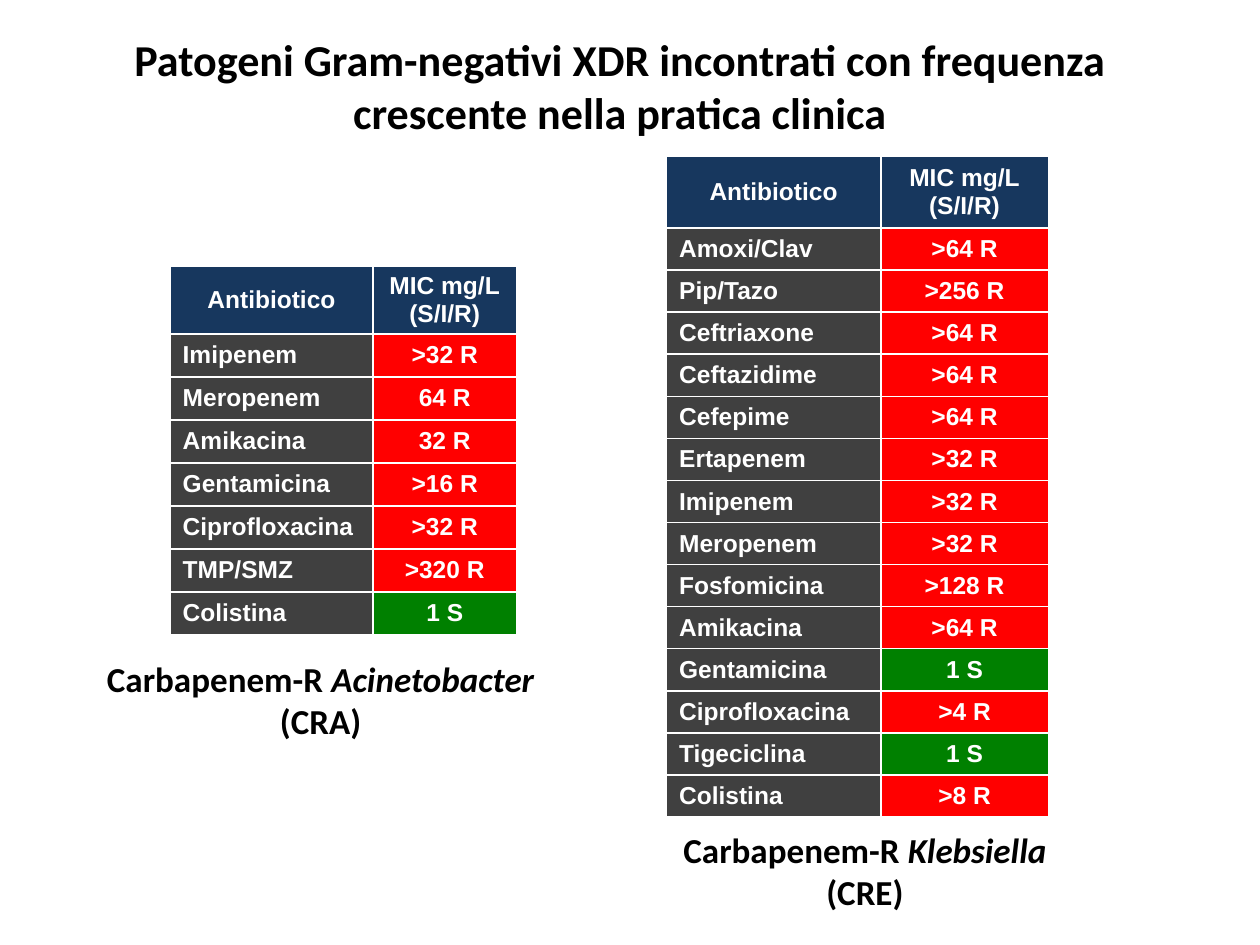
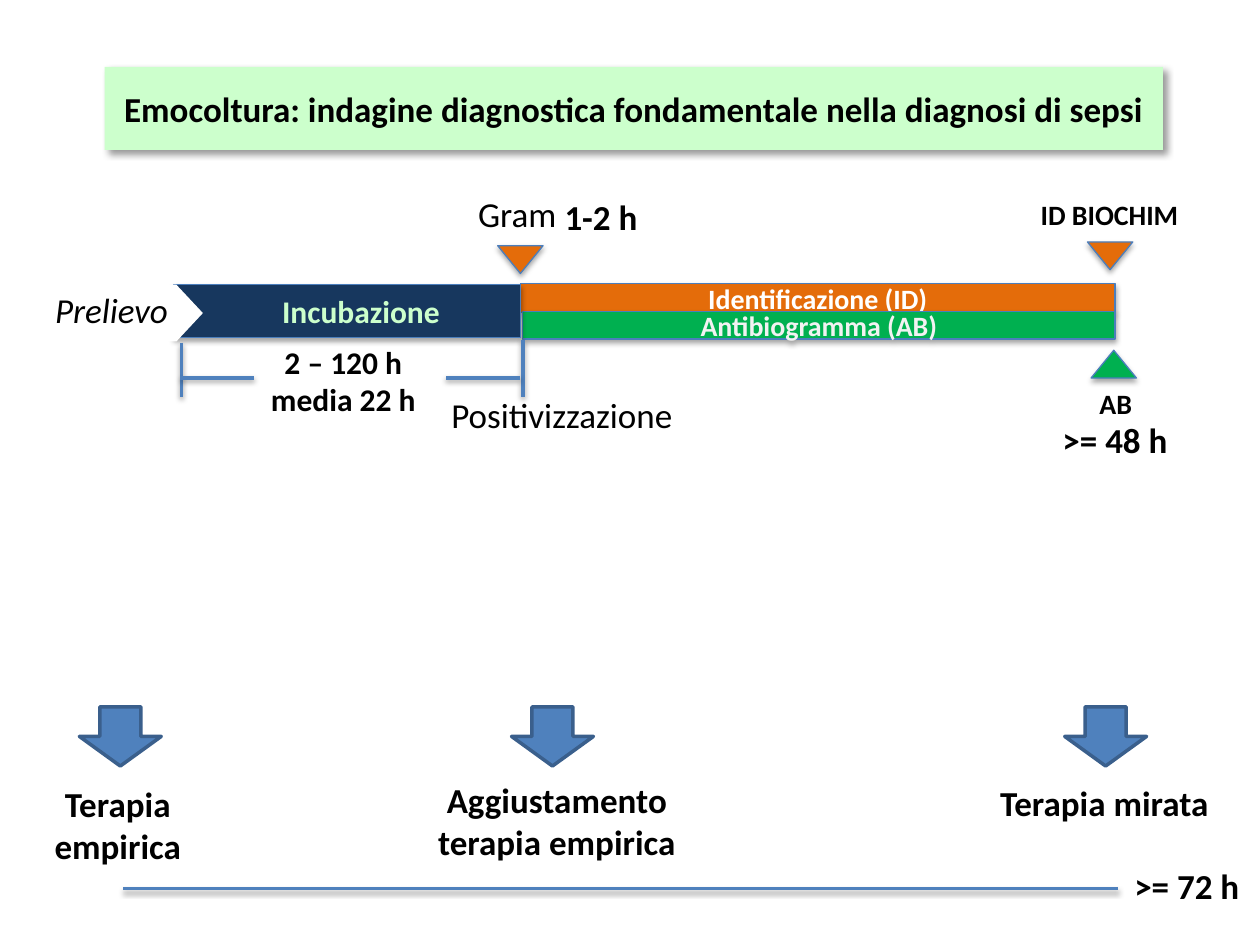
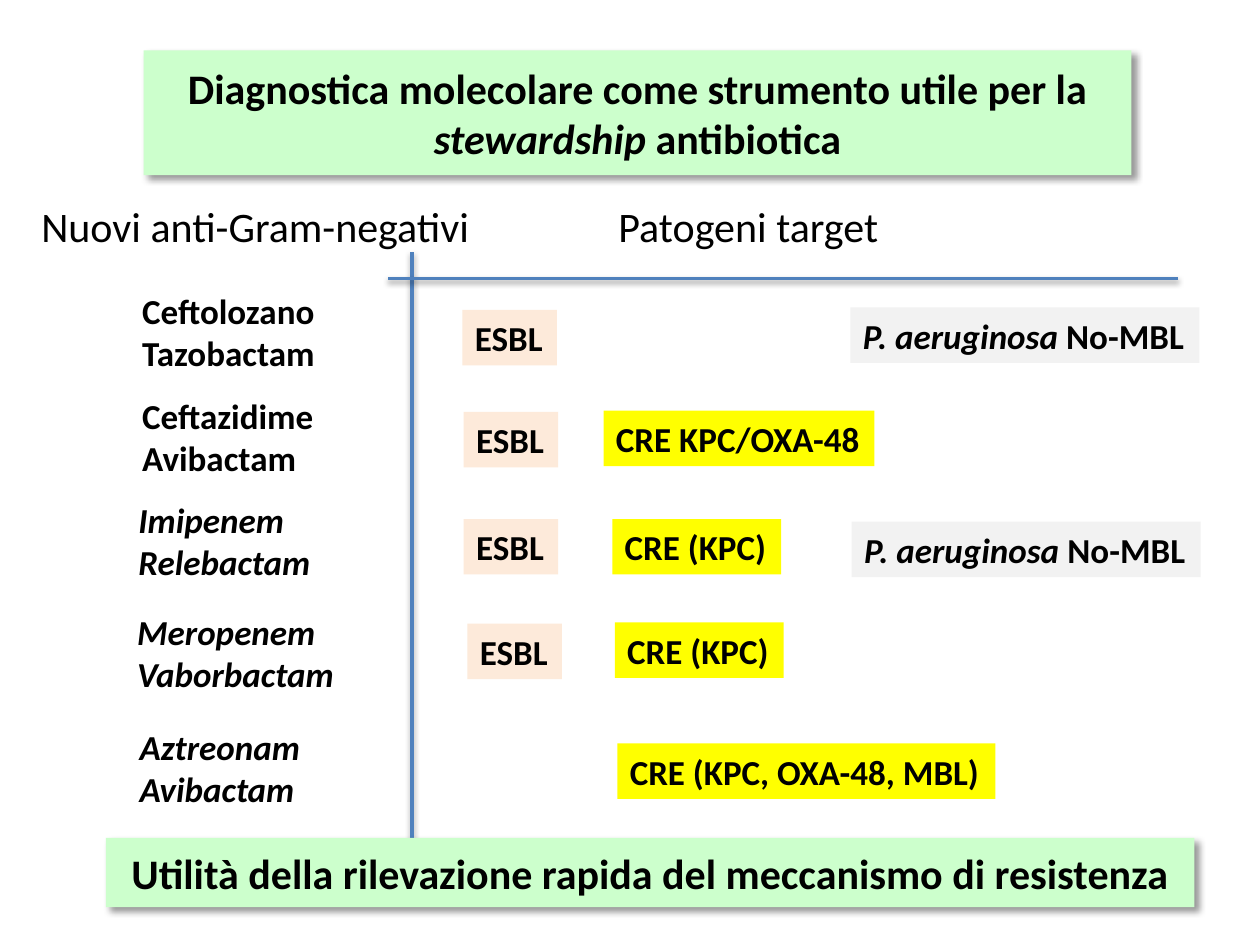
import pptx
import pptx.dml.color
import pptx.enum.shapes
import pptx.enum.text
import pptx.oxml.ns
import pptx.util
from dataclasses import dataclass
from lxml import etree

Inches = pptx.util.Inches
SHAPE = pptx.enum.shapes.MSO_SHAPE
STRAIGHT = pptx.enum.shapes.MSO_CONNECTOR.STRAIGHT
LEFT = pptx.enum.text.PP_ALIGN.LEFT
CENTER = pptx.enum.text.PP_ALIGN.CENTER
MIDDLE = pptx.enum.text.MSO_ANCHOR.MIDDLE


@dataclass(frozen=True)
class Theme:
    font: str = "Calibri"
    table_font: str = "Arial"
    black: str = "000000"
    white: str = "FFFFFF"
    navy: str = "17375E"
    charcoal: str = "404040"
    red: str = "FF0000"
    dark_green: str = "008000"
    mint: str = "CCFFCC"
    orange: str = "E46C0A"
    green: str = "00B050"
    blue: str = "4F81BD"
    yellow: str = "FFFF00"
    peach: str = "FDEADA"
    pale_gray: str = "F2F2F2"
    # outlines: colour, points
    thin: tuple = ("4B7EBC", 0.75)
    arrow_edge: tuple = ("3A5F8C", 2)
    rule: tuple = ("4F81BD", 2)
    # shadows: opacity %, blur pt, distance pt, angle
    band_shadow: tuple = (40, 4, 3, 45)
    bar_shadow: tuple = (35, 3.1, 1.8, 90)
    rule_shadow: tuple = (38, 3.1, 1.6, 90)
    # type sizes
    title: float = 25.2
    heading: int = 24
    label: int = 20
    medium: int = 18
    small: int = 16
    cell: int = 14


theme = Theme()


def dress(shape, fill=None, line=None, shadow=None):
    """Set fill, outline and shadow of a shape or connector."""
    if fill:
        shape.fill.solid()
        shape.fill.fore_color.rgb = pptx.dml.color.RGBColor.from_string(fill)
    if line:
        shape.line.color.rgb = pptx.dml.color.RGBColor.from_string(line[0])
        shape.line.width = pptx.util.Pt(line[1])
    else:
        shape.line.fill.background()
    qn = pptx.oxml.ns.qn
    effects = etree.SubElement(shape._element.spPr, qn("a:effectLst"))
    if shadow:
        opacity, blur, distance, angle = shadow
        outer = etree.SubElement(
            effects, qn("a:outerShdw"), blurRad=str(pptx.util.Pt(blur)),
            dist=str(pptx.util.Pt(distance)), dir=str(angle * 60000), rotWithShape="0")
        tint = etree.SubElement(outer, qn("a:srgbClr"), val=theme.black)
        etree.SubElement(tint, qn("a:alpha"), val=str(opacity * 1000))


def write(frame, text, size, color=theme.black, bold=True, italic=False,
          align=CENTER, font=theme.font):
    """Fill a text frame: one paragraph a line, *asterisks* around italics."""
    for index, line in enumerate(text.split("\n")):
        paragraph = frame.add_paragraph() if index else frame.paragraphs[0]
        paragraph.alignment = align
        paragraph.font.name = font
        paragraph.font.size = pptx.util.Pt(size)
        paragraph.font.bold = bold
        paragraph.font.color.rgb = pptx.dml.color.RGBColor.from_string(color)
        pieces = line.split("*")
        if len(pieces) == 1:
            paragraph.font.italic = italic
        for order, piece in enumerate(pieces):
            if piece:
                run = paragraph.add_run()
                run.text = piece
                if len(pieces) > 1:
                    run.font.italic = order % 2 == 1


prs = pptx.Presentation()
prs.slide_width, prs.slide_height = Inches(10), Inches(7.5)

# Slides and their titles: text, box, size, band colour
titles = [
    ("Patogeni Gram-negativi XDR incontrati con frequenza crescente nella pratica clinica",
     (0.76, 0.23, 8.32, 0.9), theme.title, None),
    ("Emocoltura: indagine diagnostica fondamentale nella diagnosi di sepsi",
     (0.83, 0.53, 8.4, 0.66), theme.label, theme.mint),
    ("Diagnostica molecolare come strumento utile per la *stewardship *antibiotica",
     (1.14, 0.4, 7.84, 0.99), theme.heading, theme.mint),
]
slides = []
for text, box, size, band in titles:
    slide = prs.slides.add_slide(prs.slide_layouts[5])
    title = slide.shapes.title
    title.left, title.top, title.width, title.height = map(Inches, box)
    title.text_frame.auto_size = pptx.enum.text.MSO_AUTO_SIZE.NONE
    title.text_frame.vertical_anchor = MIDDLE
    write(title.text_frame, text, size)
    if band:
        dress(title, band, shadow=theme.band_shadow)
    slides.append(slide)
pathogens, blood_culture, stewardship = (slide.shapes for slide in slides)

# Slide 1: susceptibility tables
acinetobacter = [
    ("Imipenem", ">32 R"), ("Meropenem", "64 R"), ("Amikacina", "32 R"),
    ("Gentamicina", ">16 R"), ("Ciprofloxacina", ">32 R"), ("TMP/SMZ", ">320 R"),
    ("Colistina", "1 S"),
]
klebsiella = [
    ("Amoxi/Clav", ">64 R"), ("Pip/Tazo", ">256 R"), ("Ceftriaxone", ">64 R"),
    ("Ceftazidime", ">64 R"), ("Cefepime", ">64 R"), ("Ertapenem", ">32 R"),
    ("Imipenem", ">32 R"), ("Meropenem", ">32 R"), ("Fosfomicina", ">128 R"),
    ("Amikacina", ">64 R"), ("Gentamicina", "1 S"), ("Ciprofloxacina", ">4 R"),
    ("Tigeciclina", "1 S"), ("Colistina", ">8 R"),
]
header = ("Antibiotico", "MIC mg/L\n(S/I/R)")
panels = [
    (acinetobacter, (1.35, 2.11, 2.75, 2.93), (1.61, 1.14), 0.54,
     "Carbapenem-R *Acinetobacter*\n(CRA)", (0.53, 5.17, 4.03, 0.77)),
    (klebsiella, (5.29, 1.24, 3.03, 5.23), (1.7, 1.33), 0.57,
     "Carbapenem-R *Klebsiella*\n(CRE)", (5.06, 6.53, 3.61, 0.77)),
]
for results, box, widths, header_height, caption, caption_box in panels:
    table = pathogens.add_table(len(results) + 1, 2, *map(Inches, box)).table
    table.horz_banding = False
    for column, width in zip(table.columns, widths):
        column.width = Inches(width)
    row_height = (box[3] - header_height) / len(results)
    for r, values in enumerate([header] + results):
        table.rows[r].height = Inches(row_height if r else header_height)
        for c, value in enumerate(values):
            if r == 0:
                fill = theme.navy
            elif c == 0:
                fill = theme.charcoal
            else:
                fill = theme.dark_green if value.endswith("S") else theme.red
            cell = table.cell(r, c)
            cell.vertical_anchor = MIDDLE
            cell.fill.solid()
            cell.fill.fore_color.rgb = pptx.dml.color.RGBColor.from_string(fill)
            write(cell.text_frame, value, theme.cell, theme.white,
                  align=LEFT if r and c == 0 else CENTER, font=theme.table_font)
    note = pathogens.add_textbox(*map(Inches, caption_box))
    write(note.text_frame, caption, theme.label)

# Slide 2: phase bars, with the left inset that clears the start notch
phases = [
    ("Identificazione (ID)", (4.13, 2.25, 4.72, 0.23), theme.orange, theme.small, theme.white, 0),
    ("Antibiogramma (AB)", (4.15, 2.47, 4.7, 0.22), theme.green, theme.small, theme.pale_gray, 0),
    ("Incubazione", (1.38, 2.26, 2.75, 0.42), theme.navy, theme.medium, theme.mint, 0.22),
]
for text, box, fill, size, color, inset in phases:
    phase = blood_culture.add_shape(SHAPE.RECTANGLE, *map(Inches, box))
    dress(phase, fill, theme.thin, theme.bar_shadow)
    frame = phase.text_frame
    frame.margin_top = frame.margin_bottom = frame.margin_right = 0
    frame.margin_left = Inches(inset)
    frame.vertical_anchor = MIDDLE
    write(frame, text, size, color)
start_notch = blood_culture.add_shape(
    SHAPE.PENTAGON, *map(Inches, (1.19, 2.26, 0.42, 0.45)))
dress(start_notch, theme.white)

# Slide 2: milestone markers
for left, top, fill, rotation in [
    (3.95, 1.95, theme.orange, 180),
    (8.63, 1.92, theme.orange, 180),
    (8.66, 2.78, theme.green, 0),
]:
    marker = blood_culture.add_shape(
        SHAPE.ISOSCELES_TRIANGLE, *map(Inches, (left, top, 0.36, 0.22)))
    marker.rotation = rotation
    dress(marker, fill, theme.thin, theme.bar_shadow)

# Slide 2: therapy arrows
for left in (0.63, 4.06, 8.45):
    therapy = blood_culture.add_shape(
        SHAPE.DOWN_ARROW, *map(Inches, (left, 5.61, 0.65, 0.47)))
    dress(therapy, theme.blue, theme.arrow_edge)

# Slide 2: labels as text, box, size, bold, italic
for text, box, size, bold, italic in [
    ("Gram", (3.69, 1.48, 0.83, 0.44), theme.label, False, False),
    ("1-2 h", (4.38, 1.5, 0.78, 0.44), theme.label, True, False),
    ("ID BIOCHIM", (8.15, 1.52, 1.31, 0.37), theme.small, True, False),
    ("Prelievo", (0.33, 2.24, 1.11, 0.44), theme.label, False, True),
    ("AB", (8.62, 3.02, 0.47, 0.37), theme.small, True, False),
    (">= 48 h", (8.23, 3.27, 1.24, 0.44), theme.label, True, False),
    ("Positivizzazione", (3.47, 3.07, 1.98, 0.44), theme.label, False, False),
    ("2 – 120 h\nmedia 22 h", (1.88, 2.67, 1.69, 0.71), theme.medium, True, False),
    ("Terapia\nempirica", (0.33, 6.16, 1.21, 0.77), theme.label, True, False),
    ("Aggiustamento\nterapia empirica", (3.37, 6.13, 2.1, 0.77), theme.label, True, False),
    ("Terapia mirata", (7.83, 6.15, 1.87, 0.44), theme.label, True, False),
    (">= 72 h", (8.8, 6.81, 1.24, 0.44), theme.label, True, False),
]:
    label = blood_culture.add_textbox(*map(Inches, box))
    label.text_frame.word_wrap = False
    write(label.text_frame, text, size, bold=bold, italic=italic)

# Slide 3: drugs and the pathogens they target
for drug, left, top, italic in [
    ("Ceftolozano\nTazobactam", 1.03, 2.25, False),
    ("Ceftazidime\nAvibactam", 1.03, 3.08, False),
    ("Imipenem\nRelebactam", 1, 3.91, True),
    ("Meropenem\nVaborbactam", 0.99, 4.8, True),
    ("Aztreonam\nAvibactam", 1.01, 5.71, True),
]:
    name = stewardship.add_textbox(*map(Inches, (left, top, 1.77, 0.77)))
    name.text_frame.word_wrap = True
    write(name.text_frame, drug, theme.label, italic=italic, align=LEFT)

for text, left, top, width, fill in [
    ("ESBL", 3.67, 2.46, 0.75, theme.peach),
    ("*P. aeruginosa *No-MBL", 6.75, 2.44, 2.77, theme.pale_gray),
    ("ESBL", 3.68, 3.27, 0.75, theme.peach),
    ("CRE KPC/OXA-48", 4.79, 3.26, 2.15, theme.yellow),
    ("ESBL", 3.68, 4.12, 0.75, theme.peach),
    ("CRE (KPC)", 4.86, 4.12, 1.34, theme.yellow),
    ("*P. aeruginosa *No-MBL", 6.76, 4.14, 2.77, theme.pale_gray),
    ("ESBL", 3.71, 4.95, 0.75, theme.peach),
    ("CRE (KPC)", 4.88, 4.94, 1.34, theme.yellow),
    ("CRE (KPC, OXA-48, MBL)", 4.9, 5.9, 3, theme.yellow),
]:
    target = stewardship.add_shape(
        SHAPE.RECTANGLE, *map(Inches, (left, top, width, 0.44)))
    dress(target, fill)
    target.text_frame.word_wrap = False
    write(target.text_frame, text, theme.label, align=LEFT)

for text, box in [
    ("Nuovi anti-Gram-negativi", (0.23, 1.54, 3.64, 0.5)),
    ("Patogeni target", (4.81, 1.54, 2.28, 0.5)),
]:
    heading = stewardship.add_textbox(*map(Inches, box))
    heading.text_frame.word_wrap = False
    write(heading.text_frame, text, theme.heading, bold=False, align=LEFT)

# Rules: timeline and incubation span on slide 2, axes on slide 3
for shapes, ends in [
    (blood_culture, (0.98, 7.05, 8.87, 7.05)),
    (blood_culture, (4.15, 2.7, 4.15, 3.15)),
    (blood_culture, (1.44, 2.72, 1.44, 3.15)),
    (blood_culture, (1.43, 3, 2.02, 3)),
    (blood_culture, (3.54, 3, 4.13, 3)),
    (stewardship, (3.27, 2, 3.27, 6.75)),
    (stewardship, (3.08, 2.21, 9.35, 2.21)),
]:
    rule = shapes.add_connector(STRAIGHT, *map(Inches, ends))
    dress(rule, line=theme.rule, shadow=theme.rule_shadow)

# Slide 3: closing message
message = stewardship.add_shape(
    SHAPE.RECTANGLE, *map(Inches, (0.84, 6.65, 8.64, 0.55)))
dress(message, theme.mint, shadow=theme.band_shadow)
message.text_frame.vertical_anchor = MIDDLE
write(message.text_frame, "Utilità della rilevazione rapida del meccanismo di resistenza",
      theme.heading)

prs.save("out.pptx")
